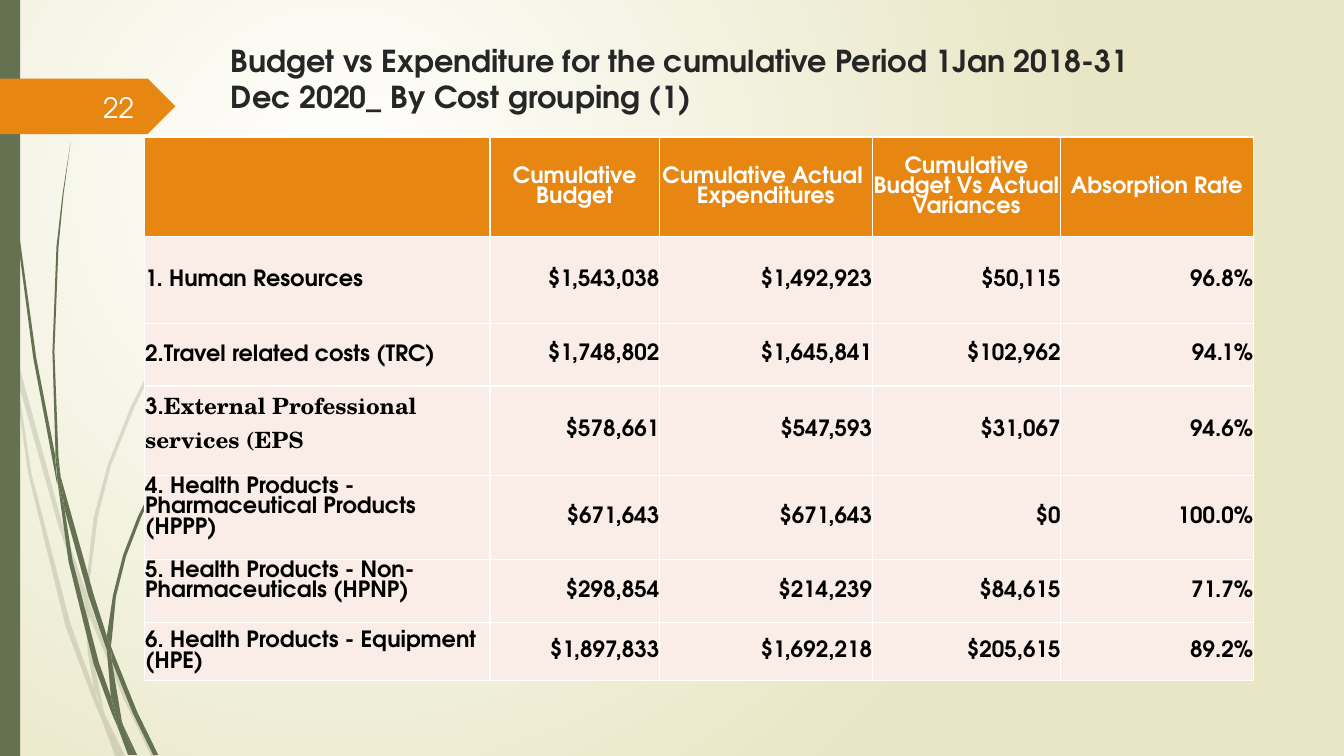
from lxml import etree
from pptx import Presentation
from pptx.dml.color import RGBColor
from pptx.enum.shapes import MSO_SHAPE
from pptx.enum.text import MSO_ANCHOR, MSO_AUTO_SIZE, PP_ALIGN
from pptx.oxml import parse_xml
from pptx.oxml.ns import nsdecls, qn
from pptx.util import Inches, Pt

RECTANGLE, PENTAGON = MSO_SHAPE.RECTANGLE, MSO_SHAPE.PENTAGON
LEFT, CENTER, RIGHT = PP_ALIGN.LEFT, PP_ALIGN.CENTER, PP_ALIGN.RIGHT
TOP, MIDDLE = MSO_ANCHOR.TOP, MSO_ANCHOR.MIDDLE

WHITE = RGBColor(0xFF, 0xFF, 0xFF)
OFF_WHITE = RGBColor(0xFE, 0xFF, 0xFF)
BLACK = RGBColor(0, 0, 0)
CHARCOAL = RGBColor(0x26, 0x26, 0x26)
SAND = RGBColor(0xE8, 0xE6, 0xC4)
MOSS = RGBColor(0x64, 0x72, 0x52)
ORANGE = RGBColor(0xE7, 0x87, 0x12)
BLUSH = RGBColor(0xFA, 0xED, 0xE7)

SANS, SERIF = "TeX Gyre Adventor", "TeX Gyre Schola"

# Outlines of the grass blades, in inches from the slide's top left corner
PALE_BLADES = [
    [(0.11, 3.5), (0.09, 3.22), (0, 2.82), (0, 2.99), (0.1, 3.44)],
    [(0.58, 5.22), (0.84, 5.99), (0.85, 5.86), (0.62, 5.2), (0.14, 3.45), (0.17, 3.76)],
    [(0.92, 6.07), (0.88, 5.96), (0.88, 6.1), (1.23, 6.94), (1.5, 7.5), (1.55, 7.5),
     (1.27, 6.92)],
    [(1.19, 7.5), (1.24, 7.5), (1.05, 7.11)],
    [(0.93, 6.83), (0.7, 6.19), (0.31, 4.69), (0.17, 3.76), (0.11, 3.5), (0.28, 4.7),
     (0.65, 6.21), (0.92, 6.93), (1.01, 7.14), (0.99, 7.07)],
    [(0.84, 5.99), (0.87, 6.46), (0.93, 6.83), (1.05, 7.11), (1.03, 7.06), (0.91, 6.46),
     (0.88, 6.1), (0.88, 6.08)],
    [(0.88, 5.84), (0.97, 5.13), (1.1, 4.62), (1.33, 4.05), (1.6, 3.49), (1.93, 2.95),
     (2.29, 2.45), (2.68, 1.98), (2.9, 1.75), (3.12, 1.54), (3.12, 1.53), (2.89, 1.75),
     (2.68, 1.97), (2.28, 2.44), (1.91, 2.95), (1.58, 3.48), (1.3, 4.03), (1.07, 4.61),
     (0.93, 5.13), (0.85, 5.84), (0.88, 5.96)],
    [(1.01, 7.14), (1.14, 7.5), (1.19, 7.5)],
    [(0.88, 6.08), (0.88, 5.96), (0.85, 5.86), (0.84, 5.99)],
    [(0.96, 6.92), (0.93, 6.83), (0.99, 7.07), (1.01, 7.14), (1.19, 7.5), (1.05, 7.11)],
]
DARK_BLADES = [
    [(0.07, 1.1), (0.17, 2.33), (0.33, 3.55), (0.56, 4.77), (0.57, 4.81), (0.55, 4.57),
     (0.55, 4.53), (0.36, 3.55), (0.19, 2.32), (0.08, 1.09), (0.05, 0.48), (0.04, 0),
     (0.03, 0), (0.04, 0.48)],
    [(0.88, 5.92), (1.06, 6.45), (1.06, 6.31), (0.93, 5.9), (0.6, 4.72), (0.64, 5.05)],
    [(1.13, 6.49), (1.1, 6.41), (1.11, 6.56), (1.32, 7.08), (1.52, 7.49), (1.57, 7.49),
     (1.36, 7.06)],
    [(1.1, 6.91), (0.98, 6.57), (0.72, 5.56), (0.64, 5.05), (0.57, 4.77), (0.68, 5.57),
     (0.93, 6.59), (1.11, 7.08), (1.17, 7.22), (1.16, 7.17)],
    [(0.6, 4.72), (0.58, 4.53), (0.54, 3.49), (0.58, 2.45), (0.63, 1.93), (0.7, 1.41),
     (0.62, 1.93), (0.56, 2.45), (0.52, 3.49), (0.55, 4.49)],
    [(1.33, 7.49), (1.36, 7.49), (1.22, 7.19)],
    [(0.57, 4.77), (0.64, 5.05), (0.6, 4.72), (0.55, 4.49), (0.55, 4.53)],
    [(1.11, 6.33), (1.15, 5.92), (1.25, 5.52), (1.4, 5.13), (1.58, 4.76), (2.05, 4.06),
     (2.31, 3.74), (2.61, 3.44), (2.6, 3.44), (2.31, 3.73), (2.04, 4.05), (1.56, 4.74),
     (1.37, 5.12), (1.22, 5.51), (1.12, 5.91), (1.06, 6.31), (1.1, 6.41)],
    [(1.17, 7.22), (1.27, 7.49), (1.31, 7.49)],
    [(1.06, 6.45), (1.1, 6.91), (1.16, 7.06), (1.22, 7.19), (1.21, 7.16), (1.11, 6.56),
     (1.09, 6.51)],
    [(1.06, 6.45), (1.09, 6.51), (1.11, 6.56), (1.1, 6.41), (1.06, 6.31)],
    [(1.16, 7.06), (1.1, 6.91), (1.16, 7.17), (1.17, 7.22), (1.3, 7.49), (1.33, 7.49),
     (1.22, 7.19)],
]

HEADINGS = ["", "Cumulative Budget", "Cumulative Actual  Expenditures",
            "Cumulative Budget Vs Actual Variances", "Absorption Rate"]
COSTS = [
    ["1. Human Resources", "$1,543,038", "$1,492,923", "$50,115", "96.8%"],
    ["2.Travel related costs (TRC)", "$1,748,802", "$1,645,841", "$102,962", "94.1%"],
    ["3.|External Professional services (EPS", "$578,661", "$547,593", "$31,067", "94.6%"],
    ["4. Health Products - Pharmaceutical Products (HPPP)",
     "$671,643", "$671,643", "$0", "100.0%"],
    ["5. Health Products - Non-Pharmaceuticals (HPNP)",
     "$298,854", "$214,239", "$84,615", "71.7%"],
    ["6. Health Products - Equipment (HPE)",
     "$1,897,833", "$1,692,218", "$205,615", "89.2%"],
]
COLUMN_WIDTHS = [3.43, 1.68, 2.11, 1.87, 1.91]
ROW_HEIGHTS = [0.99, 0.86, 0.62, 0.89, 0.83, 0.63, 0.57]
LABEL_BOTTOMS = {3: 0.17, 4: 0.2, 5: 0.2}  # room under the label, by row
TIGHT, LOOSE = Pt(14.6), Pt(24.3)


def apply(target, **values):
    for name, value in values.items():
        setattr(target, name, value)


def write(paragraph, text, size, color, bold=True, align=LEFT):
    """Fill a paragraph; text after a bar is set in the serif font."""
    paragraph.alignment = align
    for part, font in zip(text.split("|"), (SANS, SERIF)):
        run = paragraph.add_run()
        run.text = part
        apply(run.font, size=Pt(size), bold=bold, name=font)
        run.font.color.rgb = color


def paint(shape, color):
    shape.shadow.inherit = False
    shape.fill.solid()
    shape.fill.fore_color.rgb = color
    shape.line.fill.background()


def add_background(slide):
    fill = slide.background.fill
    fill.gradient()
    for stop, color in zip(fill.gradient_stops, (WHITE, SAND)):
        stop.color.rgb = color
    linear = next(slide.element.iter(qn("a:lin")))
    linear.getparent().replace(linear, parse_xml(
        f'<a:path {nsdecls("a")} path="circle">'
        '<a:fillToRect l="50000" t="50000" r="100000" b="100000"/></a:path>'))


def add_grass(slide, left, top, blades, opacity=100):
    group = slide.shapes.add_group_shape()
    for blade in blades:
        points = [(Inches(left + x), Inches(top + y)) for x, y in blade]
        builder = group.shapes.build_freeform(*points[0])
        builder.add_line_segments(points[1:], close=True)
        shape = builder.convert_to_shape()
        paint(shape, MOSS)
        if opacity < 100:
            color = shape.element.spPr.find(qn("a:solidFill"))[0]
            etree.SubElement(color, qn("a:alpha"), val=str(opacity * 1000))


def add_side_band(slide, left, top, width, height):
    band = slide.shapes.add_shape(RECTANGLE, Inches(left), Inches(top),
                                  Inches(width), Inches(height))
    paint(band, MOSS)


def add_page_tag(slide, left, top, width, height):
    tag = slide.shapes.add_shape(PENTAGON, Inches(left), Inches(top),
                                 Inches(width), Inches(height))
    paint(tag, ORANGE)
    number = slide.shapes.add_textbox(Inches(left + 0.58), Inches(top + 0.08),
                                      Inches(0.85), Inches(0.4))
    apply(number.text_frame, word_wrap=True, vertical_anchor=MIDDLE)
    write(number.text_frame.paragraphs[0], "22", 20, OFF_WHITE, False, RIGHT)


def add_title(slide, left, top, width, height):
    title = slide.shapes.title
    apply(title, left=Inches(left), top=Inches(top),
          width=Inches(width), height=Inches(height))
    apply(title.text_frame, word_wrap=True, vertical_anchor=TOP,
          auto_size=MSO_AUTO_SIZE.NONE)
    write(title.text_frame.paragraphs[0],
          "Budget vs Expenditure for the cumulative Period 1Jan 2018-31 Dec 2020_ "
          "By Cost grouping (1)", 21.6, CHARCOAL)


def add_white_borders(cell):
    properties = cell._tc.get_or_add_tcPr()
    for index, side in enumerate(("lnL", "lnR", "lnT", "lnB")):
        properties.insert(index, parse_xml(
            f'<a:{side} {nsdecls("a")} w="12700"><a:solidFill>'
            f'<a:srgbClr val="{WHITE}"/></a:solidFill></a:{side}>'))


def add_cost_table(slide, left, top, width, height):
    table = slide.shapes.add_table(len(ROW_HEIGHTS), len(COLUMN_WIDTHS), Inches(left),
                                   Inches(top), Inches(width), Inches(height)).table
    for column, share in zip(table.columns, COLUMN_WIDTHS):
        column.width = Inches(width * share / sum(COLUMN_WIDTHS))
    for row, share in zip(table.rows, ROW_HEIGHTS):
        row.height = Inches(height * share / sum(ROW_HEIGHTS))
    for r, texts in enumerate([HEADINGS] + COSTS):
        for c, text in enumerate(texts):
            cell = table.cell(r, c)
            bottom = LABEL_BOTTOMS.get(r, 0) if c == 0 else 0
            side = Inches(0.01 if r == 0 or c == 0 else 0)
            apply(cell, vertical_anchor=MIDDLE, margin_left=side, margin_right=side,
                  margin_top=side, margin_bottom=Inches(bottom))
            cell.fill.solid()
            cell.fill.fore_color.rgb = BLUSH if r else ORANGE
            add_white_borders(cell)
            paragraph = cell.text_frame.paragraphs[0]
            paragraph.line_spacing = LOOSE if "|" in text else TIGHT
            align = CENTER if r == 0 else RIGHT if c else LEFT
            if text:
                write(paragraph, text, 16, BLACK if r else WHITE, align=align)


def main():
    deck = Presentation()
    apply(deck, slide_width=Inches(13.33), slide_height=Inches(7.5))
    slide = deck.slides.add_slide(deck.slide_layouts[5])
    add_background(slide)
    add_grass(slide, 0, 0, PALE_BLADES, opacity=20)
    add_grass(slide, 0, 0, DARK_BLADES)
    add_side_band(slide, 0, 0, 0.2, 7.5)
    add_page_tag(slide, 0, 0.78, 1.74, 0.55)
    add_title(slide, 2.19, 0.37, 9.75, 0.69)
    add_cost_table(slide, 1.43, 1.36, 11, sum(ROW_HEIGHTS))
    deck.save("out.pptx")


if __name__ == "__main__":
    main()
